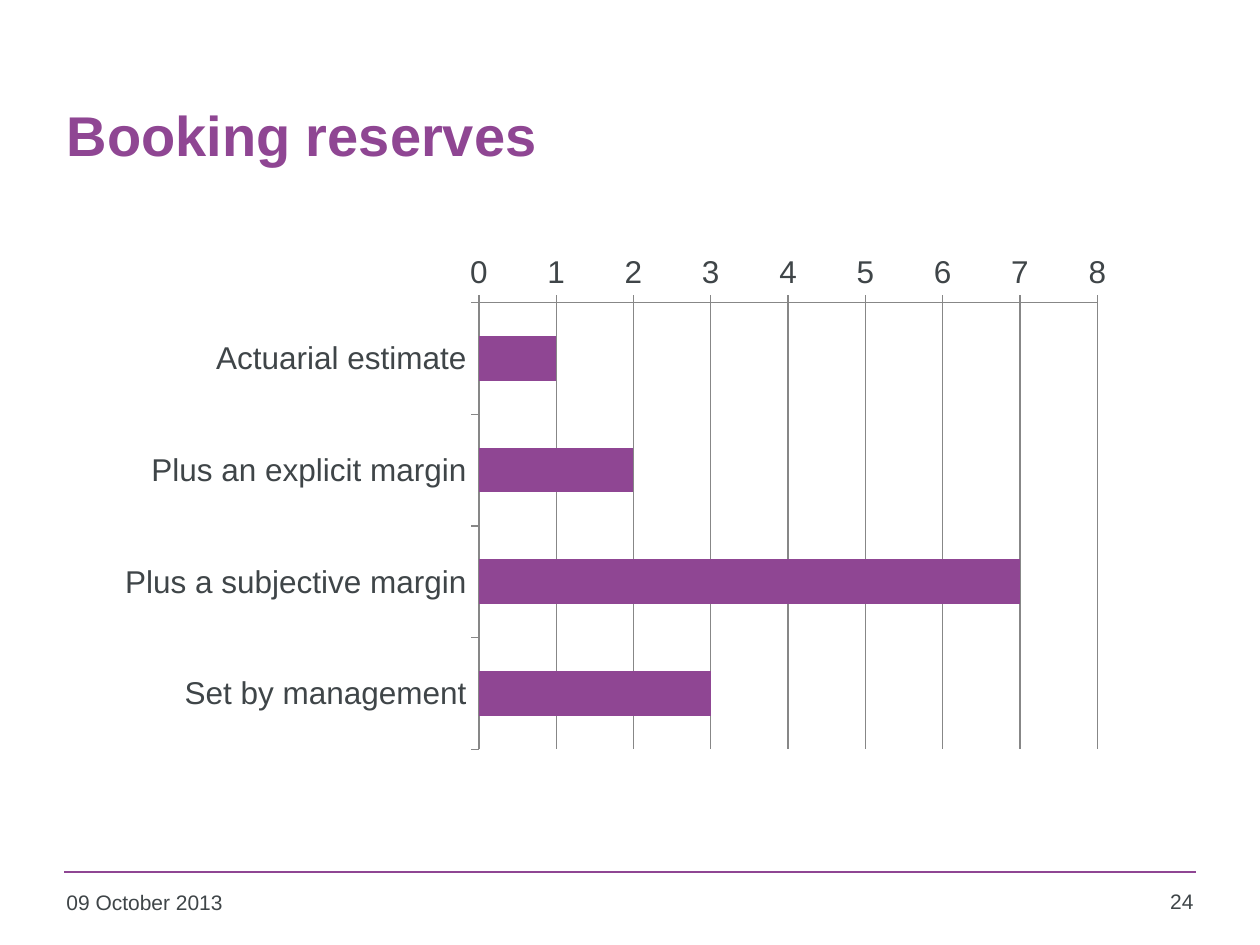
from dataclasses import dataclass

from pptx import Presentation
from pptx.chart.data import CategoryChartData
from pptx.dml.color import RGBColor
from pptx.enum.chart import XL_CHART_TYPE, XL_TICK_MARK
from pptx.enum.shapes import MSO_CONNECTOR
from pptx.enum.text import MSO_ANCHOR, PP_ALIGN
from pptx.oxml.ns import qn
from pptx.util import Pt
from lxml.etree import SubElement


@dataclass(frozen=True)
class Theme:
    font: str = "Arial"
    main: RGBColor = RGBColor(0x8F, 0x46, 0x93)
    ink: RGBColor = RGBColor(0x3F, 0x45, 0x48)
    grid: RGBColor = RGBColor(0x87, 0x87, 0x87)
    head: int = 32
    label: int = 18
    small: int = 12


THEME = Theme()
RESERVES = {
    "Actuarial estimate": 1,
    "Plus an explicit margin": 2,
    "Plus a subjective margin": 7,
    "Set by management": 3,
}


def style(font, size, color, bold=False):
    font.name = THEME.font
    font.size = Pt(size)
    font.bold = bold
    font.color.rgb = color


def add_text(slide, box, text, size=THEME.small, color=THEME.ink, bold=False,
             align=PP_ALIGN.LEFT, anchor=MSO_ANCHOR.TOP):
    frame = slide.shapes.add_textbox(*map(Pt, box)).text_frame
    frame.word_wrap = True
    frame.vertical_anchor = anchor
    line = frame.paragraphs[0]
    line.alignment = align
    run = line.add_run()
    run.text = text
    style(run.font, size, color, bold)


def add_title(slide, box, text):
    add_text(slide, box, text, size=THEME.head, color=THEME.main, bold=True,
             anchor=MSO_ANCHOR.MIDDLE)


def add_bars(slide, box, values):
    """Draw horizontal bars, first category at the top."""
    data = CategoryChartData()
    data.categories = list(values)
    data.add_series("Series 1", list(values.values()))
    chart = slide.shapes.add_chart(
        XL_CHART_TYPE.BAR_CLUSTERED, *map(Pt, box), data).chart
    chart.has_legend = False
    chart.has_title = False
    style(chart.font, THEME.label, THEME.ink)

    plot = chart.plots[0]
    plot.gap_width = 150
    plot.vary_by_categories = False
    fill = plot.series[0].format.fill
    fill.solid()
    fill.fore_color.rgb = THEME.main

    rows, scale = chart.category_axis, chart.value_axis
    rows.reverse_order = True
    scale.minimum_scale, scale.maximum_scale, scale.major_unit = 0, 8, 1
    scale.has_major_gridlines = True
    for axis in (rows, scale):
        axis.major_tick_mark = XL_TICK_MARK.OUTSIDE
        axis.minor_tick_mark = XL_TICK_MARK.NONE
    for part in (rows, scale, scale.major_gridlines):
        part.format.line.color.rgb = THEME.grid
        part.format.line.width = Pt(0.75)


def add_footer(slide, box, date, number):
    """Draw a rule along the top of the box, with date and page below."""
    left, top, width, height = box
    rule = slide.shapes.add_connector(
        MSO_CONNECTOR.STRAIGHT, Pt(left), Pt(top), Pt(left + width), Pt(top))
    rule.line.color.rgb = THEME.main
    rule.line.width = Pt(1)
    SubElement(rule.element.spPr, qn("a:effectLst"))
    over, page = 5.8, 51
    add_text(slide, (left - over, top + 6.5, 158, height - 6.5), date)
    add_text(slide, (left + width + over - page, top + 5.8, page, height - 5.8),
             number, align=PP_ALIGN.RIGHT)


def main():
    deck = Presentation()
    deck.slide_width, deck.slide_height = Pt(720), Pt(540)
    slide = deck.slides.add_slide(deck.slide_layouts[6])
    add_title(slide, (31, 31.7, 653, 90), "Booking reserves")
    add_bars(slide, (59.8, 139.7, 583.9, 294.5), RESERVES)
    add_footer(slide, (36.7, 498.2, 646.6, 32.4), "09 October 2013", "24")
    deck.save("out.pptx")


if __name__ == "__main__":
    main()
